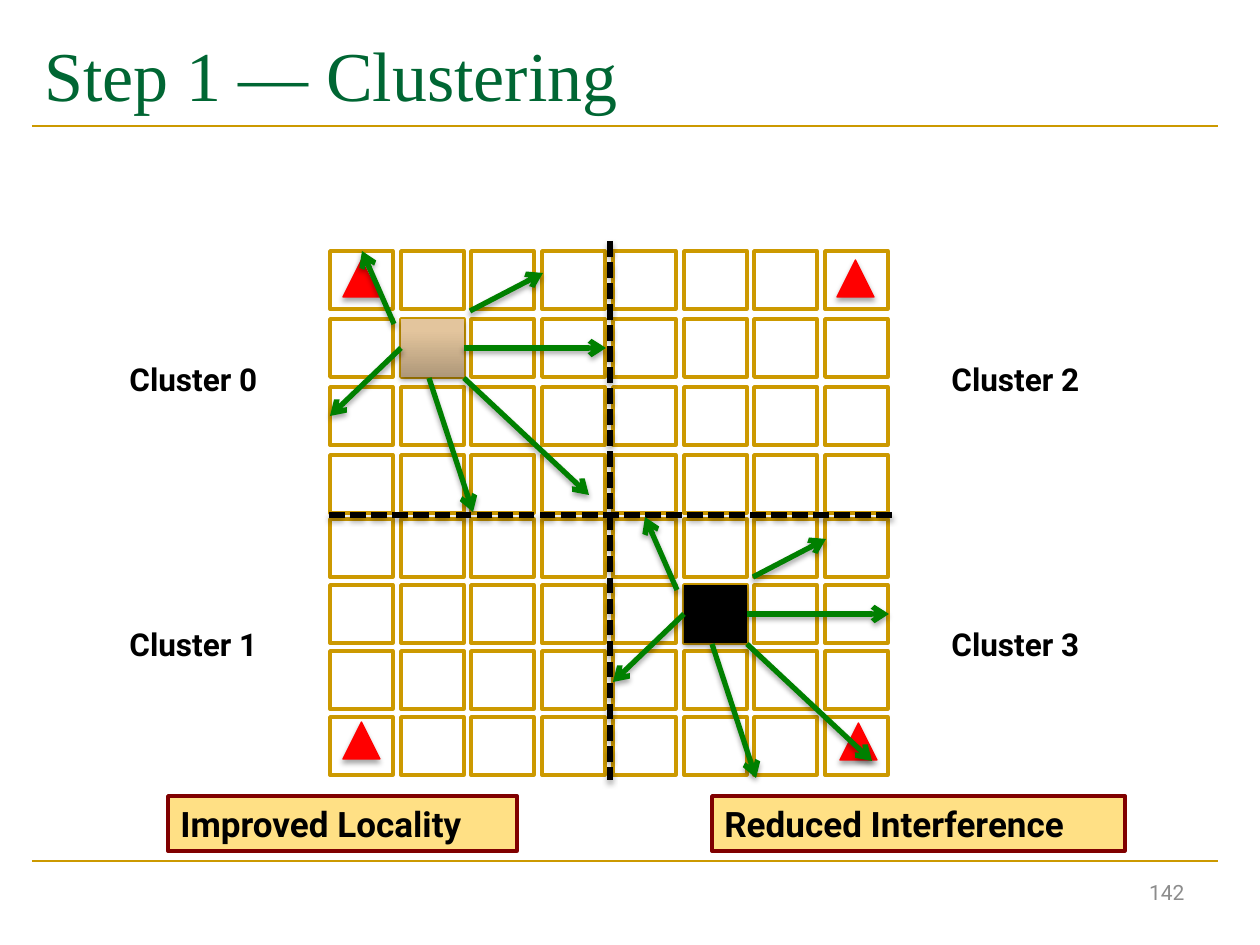
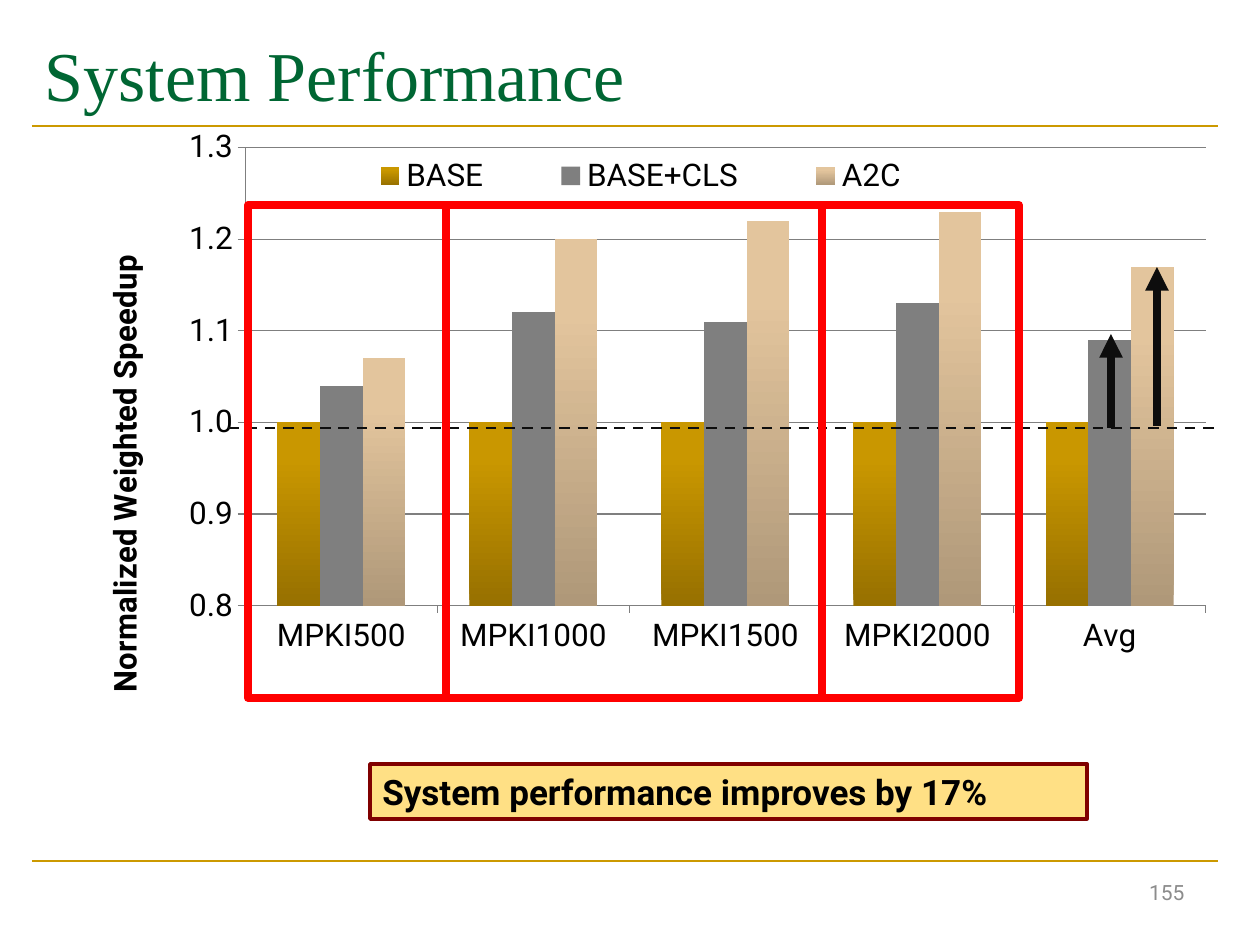
"""Build two slides on clustering cores on a mesh and the resulting system performance."""
from lxml.etree import SubElement
from pptx import Presentation
from pptx.chart.data import CategoryChartData
from pptx.dml.color import RGBColor
from pptx.enum.chart import XL_CHART_TYPE as ChartType, XL_LEGEND_POSITION as LegendPosition, XL_TICK_MARK as Tick
from pptx.enum.dml import MSO_LINE as Dash
from pptx.enum.shapes import MSO_CONNECTOR as Connector, MSO_SHAPE as Shape
from pptx.enum.text import MSO_ANCHOR as Anchor, MSO_AUTO_SIZE as AutoSize, PP_ALIGN as Align
from pptx.oxml.ns import qn
from pptx.util import Pt

WHITE = RGBColor(0xFF, 0xFF, 0xFF)
BLACK = RGBColor(0x00, 0x00, 0x00)
INK = RGBColor(0x0D, 0x0D, 0x0D)
GRAY = RGBColor(0x7F, 0x7F, 0x7F)
PAGE_GRAY = RGBColor(0x8C, 0x8C, 0x8C)
GOLD = RGBColor(0xCC, 0x99, 0x00)
TITLE_GREEN = RGBColor(0x00, 0x66, 0x33)
ARROW_GREEN = RGBColor(0x00, 0x80, 0x00)
RED = RGBColor(0xFF, 0x00, 0x00)
MAROON = RGBColor(0x80, 0x00, 0x00)
CREAM = RGBColor(0xFF, 0xE0, 0x85)
TAN_BLEND = (RGBColor(0xAF, 0x98, 0x79), RGBColor(0xE3, 0xC5, 0x9D))
GOLD_BLEND = (RGBColor(0x97, 0x70, 0x00), RGBColor(0xC9, 0x97, 0x00))

BODY_FONT = "Roboto"
TITLE_FORMAT = {"name": "Times New Roman", "size": Pt(40), "bold": False}
CALLOUT_FORMAT = {"name": BODY_FONT, "size": Pt(20), "bold": True}
LABEL_FORMAT = {"name": BODY_FONT, "size": Pt(18), "bold": True}
CHART_FORMAT = {"name": BODY_FONT, "size": Pt(18), "bold": False}
PAGE_FORMAT = {"name": BODY_FONT, "size": Pt(12), "bold": False}

EMU_PER_PX = 914400 / 126
SLIDE_SIZE = (1260, 945)
RULE_TOPS = (126, 861)
RULE_ENDS = (32, 1218)
TITLE_BOX = (32, 21, 1187, 105)
PAGE_BOX = (903, 861, 294, 63)

CLUSTERING = {
    "title": "Step 1 — Clustering",
    "page": "142",
    "callouts": [("Improved Locality", (168, 796, 349, 55)),
                 ("Reduced Interference", (712, 796, 413, 55))],
}
CELL = (63, 58)
GRID_COLUMNS = [330 + round(495 * column / 7) for column in range(8)]
GRID_ROWS = [top + step * row for top, step in ((251, 68), (519, 66)) for row in range(4)]
CONTROLLERS = [(343, 260), (837, 260), (343, 722), (840, 723)]
CONTROLLER_SIZE = (37, 37)
CORES = [(1, 1, TAN_BLEND), (5, 5, BLACK)]
CORE_ARROWS = [((63, 29), (205, 29)), ((63, 59), (188, 176)), ((28, 59), (72, 193)),
               ((69, -8), (142, -46)), ((0, 29), (-71, 97)), ((-7, 5), (-39, -68))]
DIVIDERS = [((610, 241), (610, 780)), ((892, 515), (327, 515))]
CLUSTER_LEFTS = (117, 939)
CLUSTER_TOPS = (354, 619)
CLUSTER_SIZE = (169, 50)

PERFORMANCE = {
    "title": "System Performance",
    "page": "155",
    "callouts": [("System performance improves by 17%", (370, 764, 717, 55))],
}
WORKLOADS = ["MPKI500", "MPKI1000", "MPKI1500", "MPKI2000", "Avg"]
SPEEDUPS = [("BASE", (1, 1, 1, 1, 1), GOLD_BLEND),
            ("BASE+CLS", (1.04, 1.12, 1.11, 1.13, 1.09), GRAY),
            ("A2C", (1.07, 1.2, 1.22, 1.23, 1.17), TAN_BLEND)]
AXIS_TITLE = "Normalized Weighted Speedup"
CHART_BOX = (87, 125, 1130, 573)
PLOT_LAYOUT = {"x": 0.14, "y": 0.04, "w": 0.85, "h": 0.81}
LEGEND_LAYOUT = {"x": 0.2, "y": 0.05, "w": 0.58, "h": 0.08}
AXIS_TITLE_LAYOUT = {"x": 0.01, "y": 0.23}
HIGHLIGHT_EDGES = (248, 446, 822, 1019)
HIGHLIGHT_TOP, HIGHLIGHT_HEIGHT = 205, 493
BASELINE = ((228, 428), (1218, 428))
GAINS = [((1157, 426), (1157, 267)), ((1111, 428), (1111, 334))]


def px(length):
    """Turn pixels into EMU."""
    return round(length * EMU_PER_PX)


def apply(target, values):
    """Set each named attribute of the target."""
    for name, value in values.items():
        setattr(target, name, value)


def paint(fill, paint_value):
    """Fill with nothing, one colour, or a dark-to-light blend rising upwards."""
    if paint_value is None:
        fill.background()
    elif isinstance(paint_value, RGBColor):
        fill.solid()
        fill.fore_color.rgb = paint_value
    else:
        fill.gradient()
        fill.gradient_angle = 90
        for stop, color, position in zip(fill.gradient_stops, paint_value, (0, 0.8)):
            stop.color.rgb = color
            stop.position = position


def set_shadow(shape, visible):
    """Replace the theme shadow by a soft drop shadow or by none."""
    properties = shape._element.spPr
    for effects in properties.findall(qn("a:effectLst")):
        properties.remove(effects)
    effects = SubElement(properties, qn("a:effectLst"))
    if visible:
        shadow = SubElement(effects, qn("a:outerShdw"), blurRad=str(Pt(3.1)), dist=str(Pt(1.8)),
                            dir="5400000", rotWithShape="0")
        color = SubElement(shadow, qn("a:srgbClr"), val="000000")
        SubElement(color, qn("a:alpha"), val="35000")


def add_box(slide, kind, box, fill, line=None, width=0.75, shadow=False):
    """Add a preset shape."""
    shape = slide.shapes.add_shape(kind, *map(px, box))
    paint(shape.fill, fill)
    paint(shape.line.fill, line)
    if line is not None:
        shape.line.width = Pt(width)
    set_shadow(shape, shadow)
    return shape


def add_line(slide, start, end, color, width, dash=None, head=None, shadow=False):
    """Add a straight line with an optional dash and arrowhead."""
    connector = slide.shapes.add_connector(Connector.STRAIGHT, *map(px, start + end))
    connector.line.color.rgb = color
    connector.line.width = Pt(width)
    if dash:
        connector.line.dash_style = dash
    if head:
        SubElement(connector.line._get_or_add_ln(), qn("a:tailEnd"), type=head)
    set_shadow(connector, shadow)


def write(shape, text, font_format, color, align=Align.LEFT, anchor=Anchor.TOP):
    """Put one formatted paragraph into a shape."""
    frame = shape.text_frame
    apply(frame, {"text": text, "word_wrap": True, "auto_size": AutoSize.NONE, "vertical_anchor": anchor})
    paragraph = frame.paragraphs[0]
    paragraph.alignment = align
    font = paragraph.runs[0].font
    apply(font, font_format)
    font.color.rgb = color


def add_label(slide, box, *text_format):
    """Add a text box."""
    write(slide.shapes.add_textbox(*map(px, box)), *text_format)


def add_slide(presentation, content):
    """Add a slide with title, rules, page number and callouts."""
    slide = presentation.slides.add_slide(presentation.slide_layouts[5])
    for top in RULE_TOPS:
        add_line(slide, (RULE_ENDS[0], top), (RULE_ENDS[1], top), GOLD, 1.5)
    title = slide.shapes.title
    apply(title, dict(zip(("left", "top", "width", "height"), map(px, TITLE_BOX))))
    write(title, content["title"], TITLE_FORMAT, TITLE_GREEN, Align.LEFT, Anchor.MIDDLE)
    add_label(slide, PAGE_BOX, content["page"], PAGE_FORMAT, PAGE_GRAY, Align.RIGHT, Anchor.MIDDLE)
    for text, box in content["callouts"]:
        callout = add_box(slide, Shape.RECTANGLE, box, CREAM, MAROON, 2)
        write(callout, text, CALLOUT_FORMAT, BLACK)
    return slide


def draw_mesh(slide):
    """Draw the core grid, its controllers, clusters and traffic arrows."""
    for top in GRID_ROWS:
        for left in GRID_COLUMNS:
            add_box(slide, Shape.RECTANGLE, (left, top, *CELL), WHITE, GOLD, 2)
    for corner in CONTROLLERS:
        add_box(slide, Shape.ISOSCELES_TRIANGLE, corner + CONTROLLER_SIZE, RED, RED, shadow=True)
    for start, end in DIVIDERS:
        add_line(slide, start, end, BLACK, 3, Dash.SQUARE_DOT, shadow=True)
    for column, row, fill in CORES:
        left, top = GRID_COLUMNS[column], GRID_ROWS[row]
        add_box(slide, Shape.RECTANGLE, (left, top, *CELL), fill, shadow=True)
        for arrow in CORE_ARROWS:
            start, end = [(left + x, top + y) for x, y in arrow]
            add_line(slide, start, end, ARROW_GREEN, 3, head="arrow", shadow=True)
    corners = [(left, top) for left in CLUSTER_LEFTS for top in CLUSTER_TOPS]
    for number, corner in enumerate(corners):
        add_label(slide, corner + CLUSTER_SIZE, f"Cluster {number}", LABEL_FORMAT, BLACK)


def place(element, index, layout, inner=False):
    """Give a chart part a fixed place, as fractions of the chart."""
    for previous in element.findall(qn("c:layout")):
        element.remove(previous)
    holder = SubElement(element, qn("c:layout"))
    element.insert(index, holder)
    manual = SubElement(holder, qn("c:manualLayout"))
    if inner:
        SubElement(manual, qn("c:layoutTarget"), val="inner")
    for mode in ("xMode", "yMode"):
        SubElement(manual, qn(f"c:{mode}"), val="edge")
    for name, value in layout.items():
        SubElement(manual, qn(f"c:{name}"), val=str(value))


def add_speedup_chart(slide):
    """Add the clustered column chart of speedups."""
    data = CategoryChartData(number_format="0.00")
    data.categories = WORKLOADS
    for name, values, _ in SPEEDUPS:
        data.add_series(name, values)
    chart = slide.shapes.add_chart(ChartType.COLUMN_CLUSTERED, *map(px, CHART_BOX), data).chart
    apply(chart, {"has_title": False, "has_legend": True})
    apply(chart.font, CHART_FORMAT)
    chart.font.color.rgb = BLACK
    apply(chart.legend, {"position": LegendPosition.TOP, "include_in_layout": True})
    place(chart.legend._element, 1, LEGEND_LAYOUT)

    plot = chart.plots[0]
    apply(plot, {"gap_width": 150, "overlap": 0, "vary_by_categories": False})
    for series, (_, _, fill) in zip(plot.series, SPEEDUPS):
        paint(series.format.fill, fill)
    place(chart._chartSpace.chart.plotArea, 0, PLOT_LAYOUT, inner=True)

    value_axis = chart.value_axis
    apply(value_axis, {"minimum_scale": 0.8, "maximum_scale": 1.3, "major_unit": 0.1,
                       "has_major_gridlines": True, "has_title": True})
    apply(value_axis.tick_labels, {"number_format": "0.0", "number_format_is_linked": False})
    for axis in (value_axis, chart.category_axis):
        apply(axis, {"major_tick_mark": Tick.OUTSIDE, "minor_tick_mark": Tick.NONE})
    for part in (value_axis, chart.category_axis, value_axis.major_gridlines):
        part.format.line.color.rgb = GRAY
        part.format.line.width = Pt(0.75)

    axis_title = value_axis.axis_title
    axis_title.text_frame.text = AXIS_TITLE
    font = axis_title.text_frame.paragraphs[0].runs[0].font
    apply(font, LABEL_FORMAT)
    font.color.rgb = BLACK
    body = axis_title._element.find(".//" + qn("a:bodyPr"))
    body.set("rot", "-5400000")
    body.set("vert", "horz")
    place(axis_title._element, 1, AXIS_TITLE_LAYOUT)


def mark_gains(slide):
    """Mark the baseline, the workload groups and the average gains."""
    add_line(slide, *BASELINE, INK, 1.5, Dash.DASH)
    for left, right in zip(HIGHLIGHT_EDGES, HIGHLIGHT_EDGES[1:]):
        box = (left, HIGHLIGHT_TOP, right - left, HIGHLIGHT_HEIGHT)
        add_box(slide, Shape.RECTANGLE, box, None, RED, 4.5)
    for start, end in GAINS:
        add_line(slide, start, end, INK, 4.5, head="triangle")


def main():
    """Build and save the presentation."""
    presentation = Presentation()
    apply(presentation, dict(zip(("slide_width", "slide_height"), map(px, SLIDE_SIZE))))
    draw_mesh(add_slide(presentation, CLUSTERING))
    performance_slide = add_slide(presentation, PERFORMANCE)
    add_speedup_chart(performance_slide)
    mark_gains(performance_slide)
    presentation.save("out.pptx")


if __name__ == "__main__":
    main()
